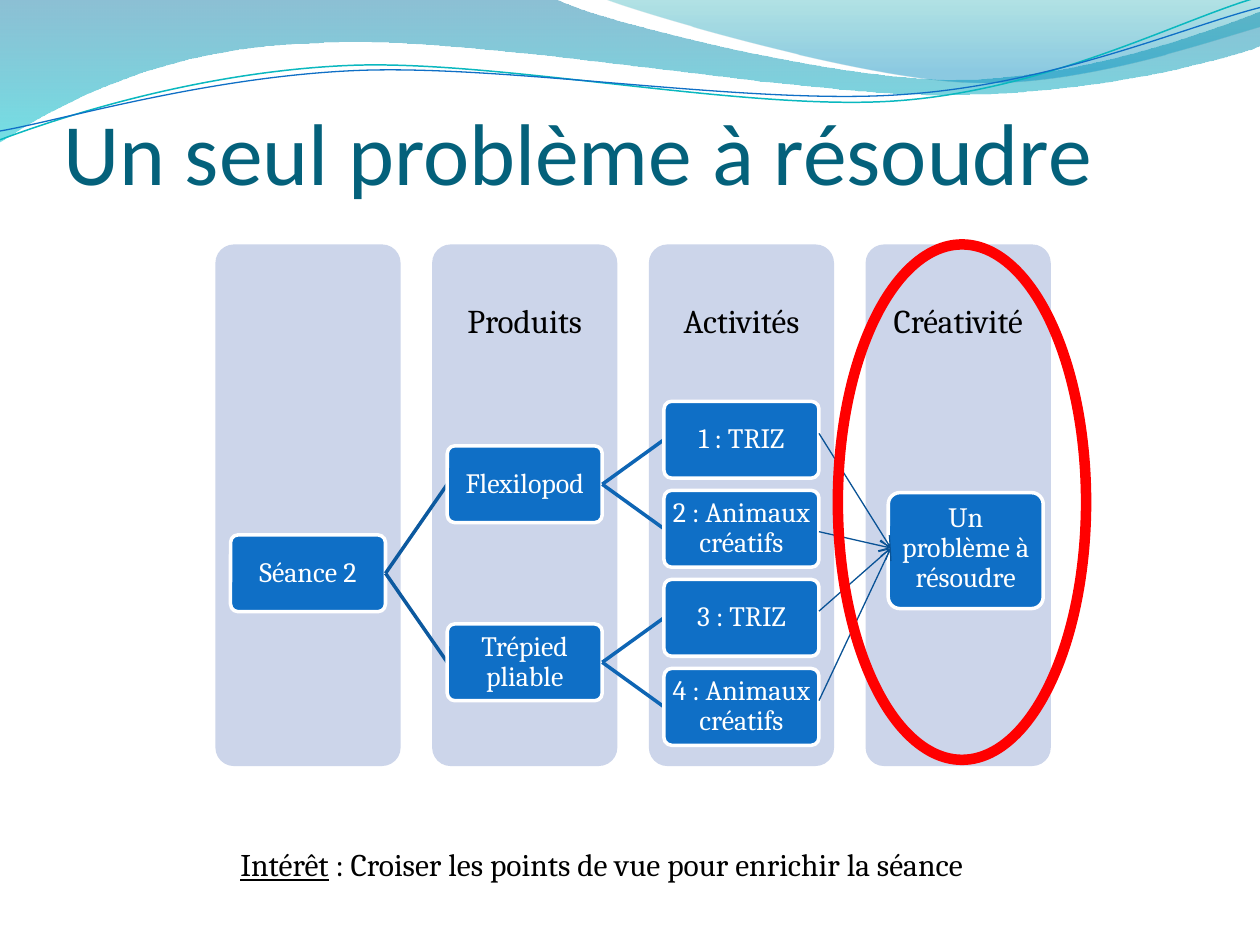
from lxml.etree import SubElement
from pptx import Presentation
from pptx.dml.color import RGBColor
from pptx.enum.shapes import MSO_CONNECTOR, MSO_SHAPE
from pptx.enum.text import MSO_ANCHOR, PP_ALIGN
from pptx.oxml.ns import qn
from pptx.util import Inches, Pt

WHITE = RGBColor(0xFF, 0xFF, 0xFF)
BLACK = RGBColor(0, 0, 0)
RED = RGBColor(0xFF, 0, 0)
BLUE = RGBColor(0x0F, 0x6F, 0xC6)
PALE = RGBColor(0xCC, 0xD5, 0xEA)
TEAL = RGBColor(0x04, 0x61, 0x7B)
ARROW = RGBColor(0x09, 0x52, 0x95)
LINKS = [RGBColor(0x0C, 0x59, 0x9F), RGBColor(0x0E, 0x65, 0xB4)]
AQUA = RGBColor(0x0A, 0xB8, 0xBF)

WAVE_FILLS = [
    ([(0, 0), (4.4, -0.01), (4.76, 0.17, 6.64, 0.63, 7.58, 0.63),
      (8.53, 0.63, 9.58, 0.26, 10, 0.09), (10.01, 0.36),
      (9.83, 0.44, 8.7, 0.76, 7.46, 0.75), (6.22, 0.75, 3.82, 0.28, 2.57, 0.34),
      (1.29, 0.36, 0.46, 0.83, -0.01, 1.13), (0, 0)],
     [(0, RGBColor(0x00, 0x74, 0xA1), 45), (1, RGBColor(0x00, 0xC6, 0xCF), 55)]),
    ([(4.79, -0.01), (5.09, 0.11, 6.82, 0.62, 7.69, 0.65),
      (8.56, 0.69, 9.61, 0.32, 10, 0.21), (10, 0), (4.79, -0.01)],
     [(0, RGBColor(0x00, 0xA1, 0xA9), 30), (0.8, RGBColor(0x00, 0x8B, 0xBF), 45)]),
]
WAVE_LINES = [
    ([(0, 1.11), (0.48, 0.93, 1.58, 0.57, 2.77, 0.52),
      (3.95, 0.47, 5.93, 0.89, 7.13, 0.8), (8.33, 0.71, 9.38, 0.15, 9.98, -0.02)],
     AQUA, 0.85),
    ([(0, 1.04), (0.47, 0.96, 1.64, 0.61, 2.83, 0.56),
      (4.03, 0.51, 5.97, 0.84, 7.17, 0.75), (8.36, 0.67, 9.41, 0.21, 10, 0.06)],
     BLUE, 0.75),
]

COL_LEFT, COL_TOP, COL_W, COL_H, COL_PITCH = 1.71, 1.94, 1.47, 4.14, 1.72
BOX_W, BOX_H, BOX_INDENT = 1.23, 0.61, 0.12
LEAF_TOP, LEAF_PITCH = 3.49, 2.12 / 3
HEADINGS = ["", "Produits", "Activités", "Créativité"]
TREE = ("Séance 2", [
    ("Flexilopod", [("1 : TRIZ", []), ("2 : Animaux créatifs", [])]),
    ("Trépied pliable", [("3 : TRIZ", []), ("4 : Animaux créatifs", [])]),
])
ARROW_STARTS = [3.44, 4.22, 4.85, 5.56]


def add_wave(s, segments, close):
    pts = [(Inches(seg[i]), Inches(seg[i + 1]))
           for seg in segments for i in range(0, len(seg), 2)]
    fb = s.shapes.build_freeform(*pts[0], scale=1.0)
    fb.add_line_segments(pts[1:], close=close)
    sp = fb.convert_to_shape()
    sp.shadow.inherit = False
    lines = iter(list(sp._element.iter(qn("a:lnTo"))))
    for seg in segments[1:]:
        first = next(lines)
        if len(seg) == 6:
            curve = first.makeelement(qn("a:cubicBezTo"))
            first.addprevious(curve)
            for ln in (first, next(lines), next(lines)):
                curve.append(ln[0])
                ln.getparent().remove(ln)
    return sp


def add_wave_fill(s, segments, stops):
    sp = add_wave(s, segments, True)
    sp.line.fill.background()
    sp.fill.gradient()
    sp.fill.gradient_angle = 270
    for stop, (pos, color, alpha) in zip(sp.fill.gradient_stops, stops):
        stop.position = pos
        stop.color.rgb = color
    clrs = sp._element.spPr.iter(qn("a:srgbClr"))
    for clr, (pos, color, alpha) in zip(clrs, stops):
        SubElement(clr, qn("a:alpha")).set("val", str(alpha * 1000))


def add_wave_line(s, segments, color, width):
    sp = add_wave(s, segments, False)
    sp.fill.background()
    sp.line.color.rgb = color
    sp.line.width = Pt(width)


def add_panel(s, kind, x, y, w, h, fill=None, line=None, width=2):
    sp = s.shapes.add_shape(kind, Inches(x), Inches(y), Inches(w), Inches(h))
    sp.shadow.inherit = False
    if kind == MSO_SHAPE.ROUNDED_RECTANGLE:
        sp.adjustments[0] = 0.1
    if fill is None:
        sp.fill.background()
    else:
        sp.fill.solid()
        sp.fill.fore_color.rgb = fill
    if line is None:
        sp.line.fill.background()
    else:
        sp.line.color.rgb = line
        sp.line.width = Pt(width)
    return sp


def style_run(r, size, color, font="Cambria"):
    r.font.size = Pt(size)
    r.font.name = font
    r.font.color.rgb = color


def set_text(sp, text, size, color, inset):
    tf = sp.text_frame
    tf.word_wrap = True
    tf.vertical_anchor = MSO_ANCHOR.MIDDLE
    tf.margin_left = tf.margin_right = tf.margin_top = tf.margin_bottom = Inches(inset)
    p = tf.paragraphs[0]
    p.text = text
    p.alignment = PP_ALIGN.CENTER
    p.line_spacing = 0.9
    style_run(p.runs[0], size, color)


def add_box(s, text, x, y, h=BOX_H):
    sp = add_panel(s, MSO_SHAPE.ROUNDED_RECTANGLE, x, y, BOX_W, h, BLUE, WHITE)
    set_text(sp, text, 16, WHITE, 0.01)
    return sp


def add_line(s, x1, y1, x2, y2, color, width, arrow=False):
    cx = s.shapes.add_connector(MSO_CONNECTOR.STRAIGHT, Inches(x1), Inches(y1),
                                Inches(x2), Inches(y2))
    cx.line.color.rgb = color
    cx.line.width = Pt(width)
    if arrow:
        SubElement(cx.line._get_or_add_ln(), qn("a:tailEnd")).set("type", "arrow")
    SubElement(cx._element.spPr, qn("a:effectLst"))


def add_column(s, i, heading):
    x = COL_LEFT + i * COL_PITCH
    add_panel(s, MSO_SHAPE.ROUNDED_RECTANGLE, x, COL_TOP, COL_W, COL_H, PALE)
    if heading:
        tb = s.shapes.add_textbox(Inches(x), Inches(COL_TOP), Inches(COL_W), Inches(1.24))
        set_text(tb, heading, 19, BLACK, 0.15)


def count_leaves(node):
    return sum(map(count_leaves, node[1])) or 1


def center_y(node, first):
    return LEAF_TOP + LEAF_PITCH * (first + (count_leaves(node) - 1) / 2)


def add_tree(s, node, level=0, first=0):
    text, children = node
    x, y = COL_LEFT + BOX_INDENT + level * COL_PITCH, center_y(node, first)
    add_box(s, text, x, y - BOX_H / 2)
    for child in children:
        add_line(s, x + BOX_W, y, x + COL_PITCH, center_y(child, first), LINKS[level], 2)
        add_tree(s, child, level + 1, first)
        first += count_leaves(child)


def add_title(s, text):
    sp = s.shapes.title
    sp.left, sp.top, sp.width, sp.height = Inches(0.5), Inches(0.36), Inches(9), Inches(1.25)
    tf = sp.text_frame
    tf.text = text
    tf.vertical_anchor = MSO_ANCHOR.BOTTOM
    tf.margin_left = tf.margin_right = tf.margin_bottom = 0
    tf.margin_top = Inches(0.05)
    p = tf.paragraphs[0]
    p.alignment = PP_ALIGN.LEFT
    style_run(p.runs[0], 50, TEAL, "Calibri")
    sp._element.getparent().append(sp._element)


def add_note(s, label, text):
    tb = s.shapes.add_textbox(Inches(1.81), Inches(6.66), Inches(6.27), Inches(0.4))
    tb.text_frame.word_wrap = False
    p = tb.text_frame.paragraphs[0]
    for part in (label, text):
        r = p.add_run()
        r.text = part
        style_run(r, 18, BLACK)
    p.runs[0].font.underline = True


def main():
    prs = Presentation()
    prs.slide_width, prs.slide_height = Inches(10), Inches(7.5)
    s = prs.slides.add_slide(prs.slide_layouts[5])
    for wave in WAVE_FILLS:
        add_wave_fill(s, *wave)
    for wave in WAVE_LINES:
        add_wave_line(s, *wave)
    add_title(s, "Un seul problème à résoudre")
    for i, heading in reversed(list(enumerate(HEADINGS))):
        add_column(s, i, heading)
    add_tree(s, TREE)
    goal = add_box(s, "Un problème à résoudre", 7.05, 3.91, 0.92)
    goal.text_frame.margin_bottom = Inches(0.04)
    for y in ARROW_STARTS:
        add_line(s, 6.5, y, 7.07, 4.35, ARROW, 0.75, arrow=True)
    add_panel(s, MSO_SHAPE.OVAL, 6.65, 1.94, 1.97, 4.09, line=RED, width=6)
    add_note(s, "Intérêt", " : Croiser les points de vue pour enrichir la séance")
    prs.save("out.pptx")


if __name__ == "__main__":
    main()
